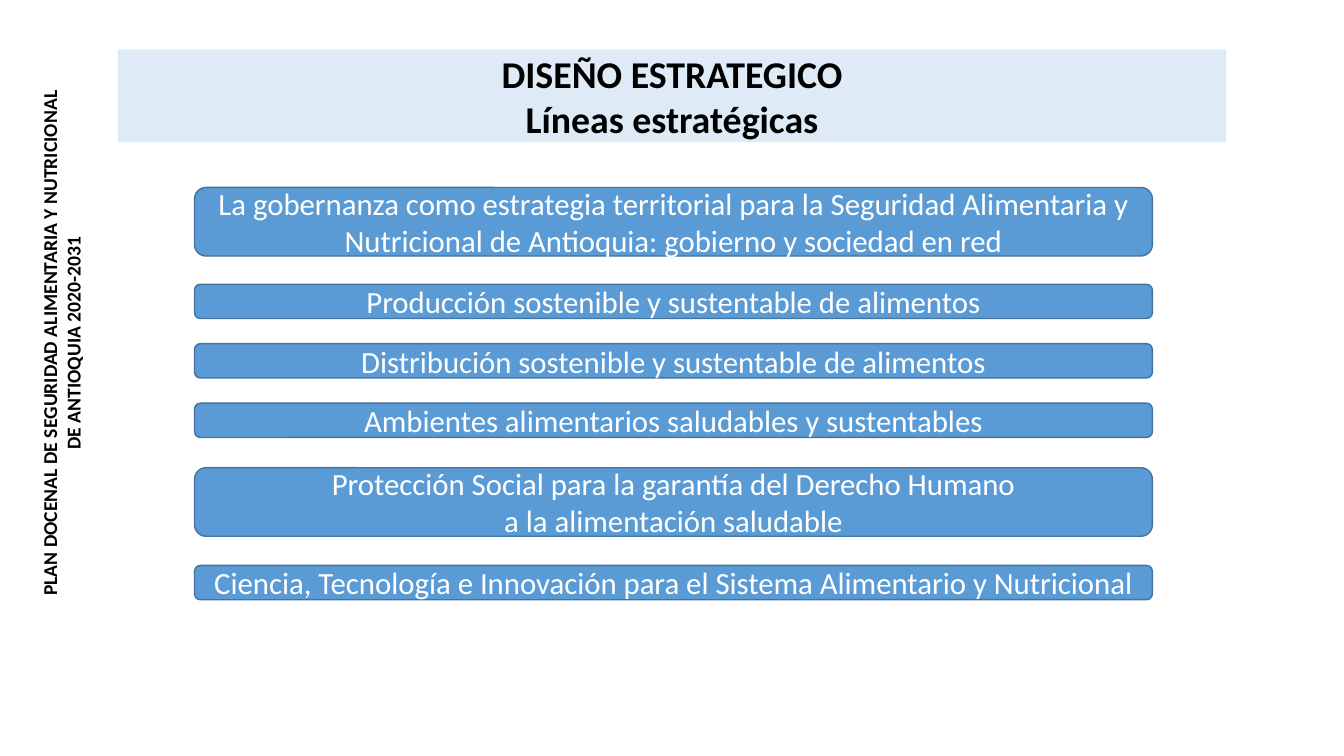
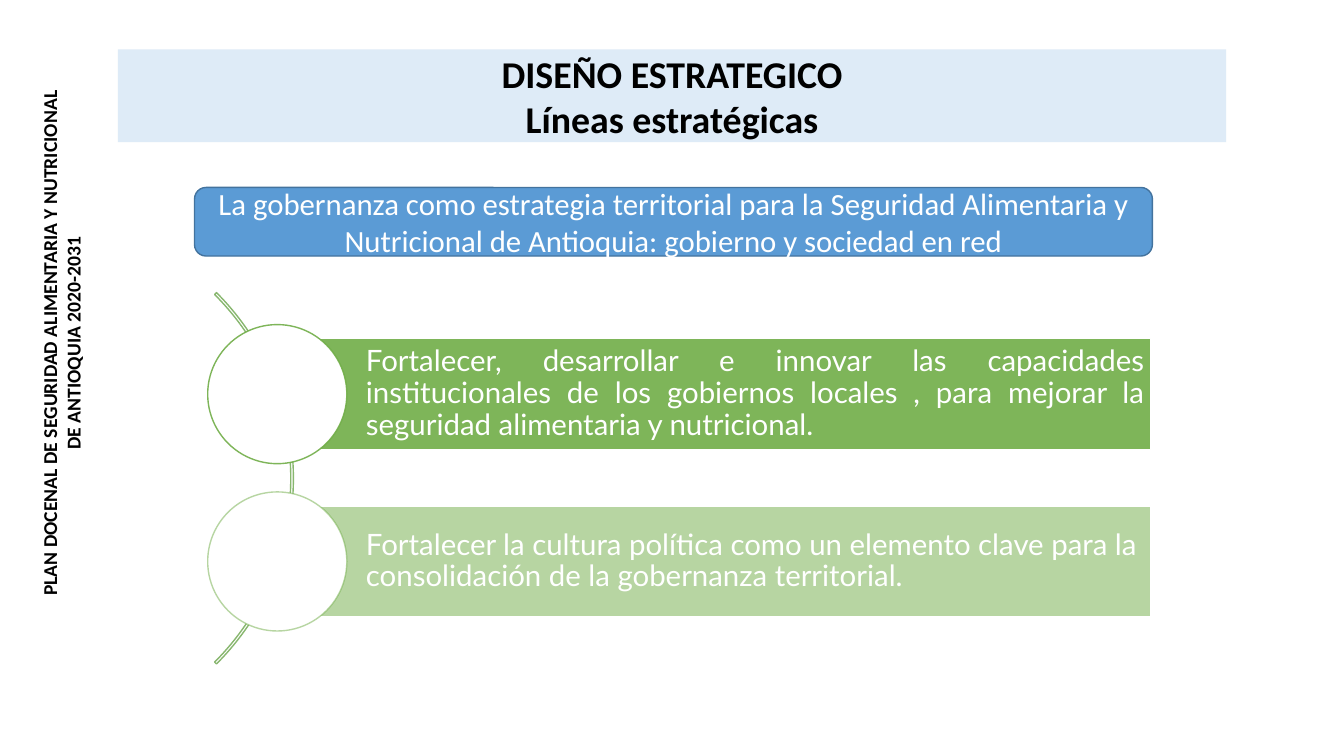
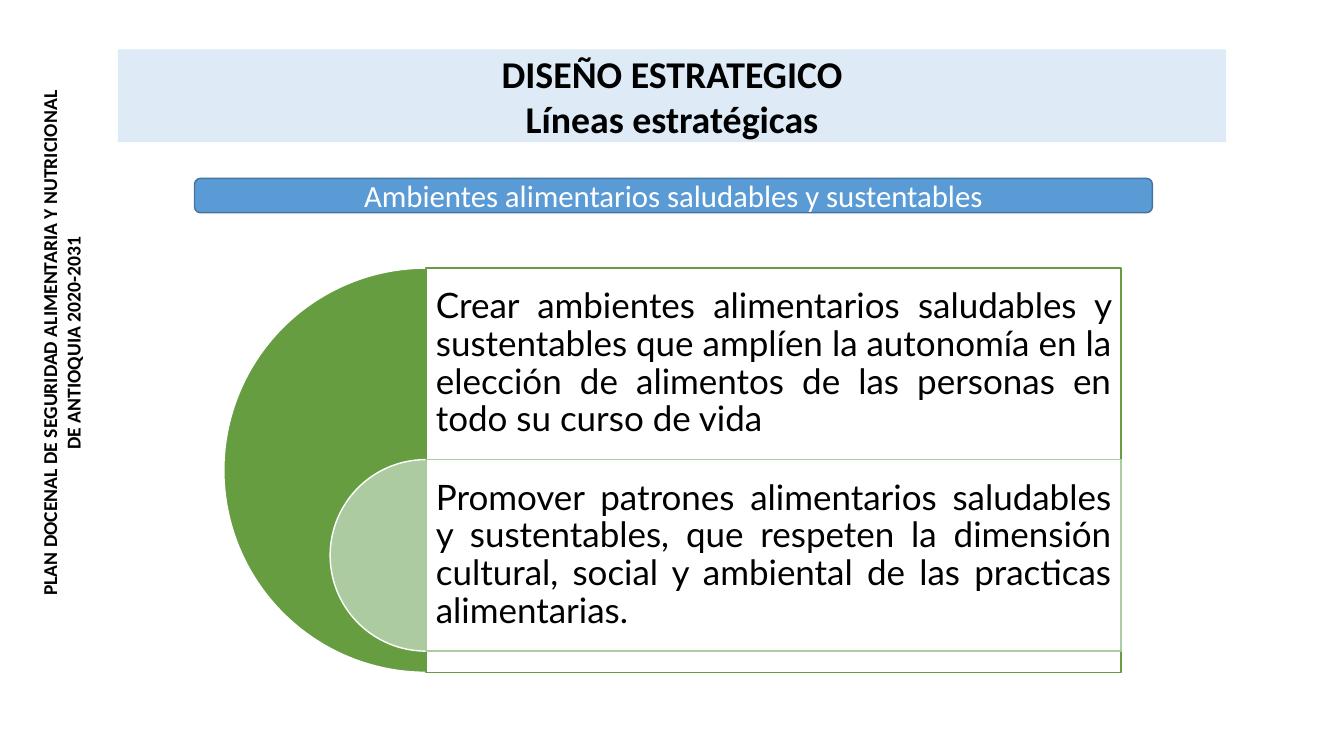
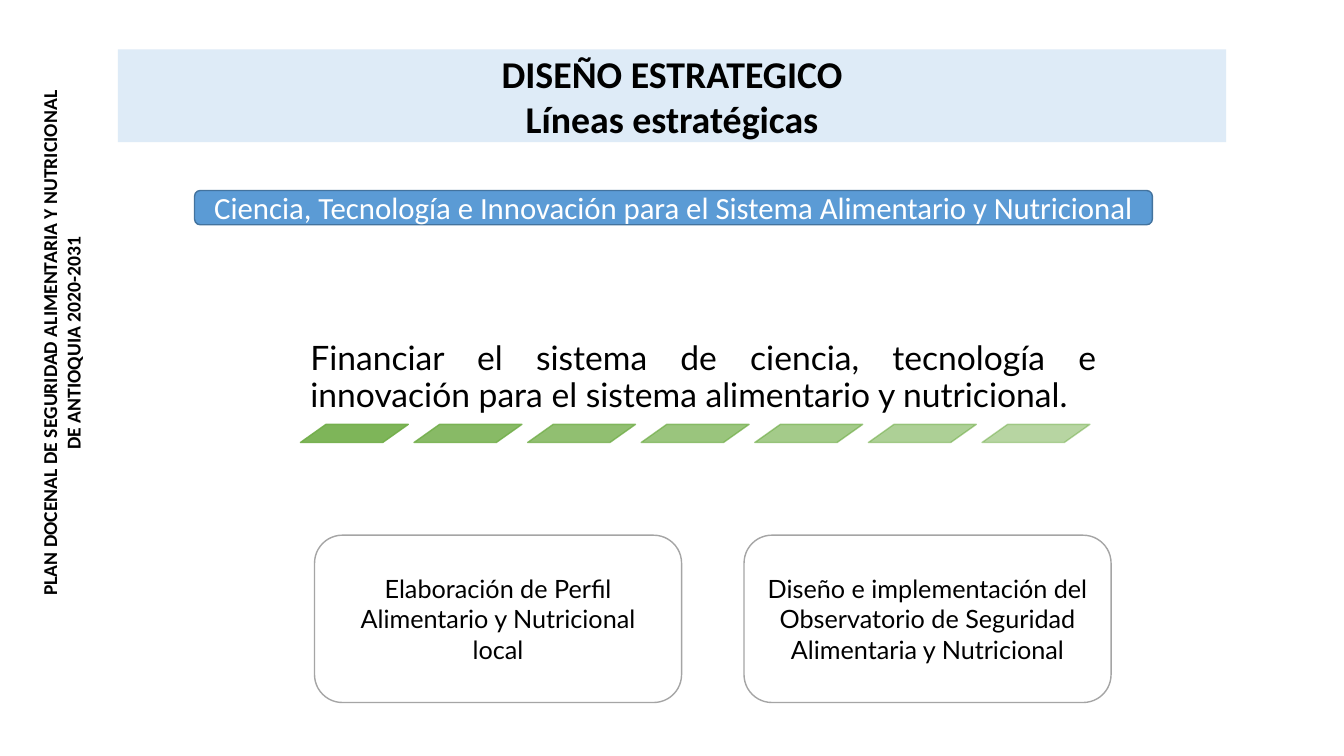
import collections

import pptx
import pptx.dml.color
import pptx.enum.shapes
import pptx.enum.text
import pptx.oxml.ns
import pptx.util
from lxml import etree

Inches = pptx.util.Inches
SHAPE = pptx.enum.shapes.MSO_SHAPE
ALIGN = pptx.enum.text.PP_ALIGN
ANCHOR = pptx.enum.text.MSO_ANCHOR
Box = collections.namedtuple("Box", "left top width height")

COLORS = {
    "black": "000000", "white": "FFFFFF", "band": "DEEBF7",
    "bar": "5B9BD5", "bar line": "43739E", "green": "70AD47",
    "arc": "88B76F", "dark green": "669D40", "pale green": "ADCBA0",
    "grey": "A5A5A5",
}
TITLE_BOX = Box(1.17, 0.49, 10.99, 0.92)
SIDE_BOX = Box(-4.7, 3.16, 10.61, 0.49)
BAR_LEFT, BAR_WIDTH, BAR_LINE_HEIGHT = 1.93, 9.5, 0.34

TITLE_FORMAT = {"name": "Calibri", "size": 27, "bold": True, "color": "black"}
SIDE_FORMAT = {"name": "Calibri", "size": 14, "bold": True, "color": "black"}
BAR_FORMAT = {"name": "Calibri", "size": 22, "color": "white"}
STRIPE_FORMAT = {"name": "Lato", "size": 21, "color": "white"}
PANEL_FORMAT = {"name": "Lato", "size": 25, "color": "black"}
GOAL_FORMAT = {"name": "Lato", "size": 24, "color": "black"}
CARD_FORMAT = {"name": "Lato", "size": 18, "color": "black"}

TITLE = ["DISEÑO ESTRATEGICO", "Líneas estratégicas"]
SIDE_LABEL = ["PLAN DOCENAL DE SEGURIDAD ALIMENTARIA Y NUTRICIONAL",
              "DE ANTIOQUIA 2020-2031"]
GOVERNANCE = ["La gobernanza como estrategia territorial para la Seguridad Alimentaria y",
              "Nutricional de Antioquia: gobierno y sociedad en red"]
ENVIRONMENTS = ["Ambientes alimentarios saludables y sustentables"]
SCIENCE = ["Ciencia, Tecnología e Innovación para el Sistema Alimentario y Nutricional"]
STRATEGIES = [
    (1.86, GOVERNANCE),
    (2.82, ["Producción sostenible y sustentable de alimentos"]),
    (3.41, ["Distribución sostenible y sustentable de alimentos"]),
    (4, ENVIRONMENTS),
    (4.64, ["Protección Social para la garantía del Derecho Humano",
            "a la alimentación saludable"]),
    (5.61, SCIENCE),
]


def rgb(color):
    return pptx.dml.color.RGBColor.from_string(COLORS[color])


def paint(color_format, color, opacity):
    """Set a solid fill's colour, with opacity in percent."""
    color_format.solid()
    color_format.fore_color.rgb = rgb(color)
    if opacity < 100:
        solid = color_format._xPr.find(pptx.oxml.ns.qn("a:solidFill"))
        etree.SubElement(solid[0], pptx.oxml.ns.qn("a:alpha"),
                         val=str(round(opacity * 1000)))


def place(shape, box):
    for side, length in box._asdict().items():
        setattr(shape, side, Inches(length))


def add_shape(page, kind, box, fill=None, line=None, opacity=100,
              line_opacity=100, adjust=()):
    shape = page.shapes.add_shape(kind, *map(Inches, box))
    shape.shadow.inherit = False
    if fill:
        paint(shape.fill, fill, opacity)
    else:
        shape.fill.background()
    if line:
        paint(shape.line.fill, line, line_opacity)
        shape.line.width = pptx.util.Pt(1)
    else:
        shape.line.fill.background()
    for index, value in enumerate(adjust):
        shape.adjustments[index] = value
    return shape


def write(shape, lines, font, align=ALIGN.CENTER, anchor=ANCHOR.MIDDLE,
          insets=(0.1, 0.05, 0.1, 0.05), spacing=1.0):
    """Fill a shape with one paragraph a line; insets run left, top, right, bottom."""
    frame = shape.text_frame
    frame.word_wrap = True
    frame.auto_size = pptx.enum.text.MSO_AUTO_SIZE.NONE
    frame.vertical_anchor = anchor
    for side, inset in zip(("left", "top", "right", "bottom"), insets):
        setattr(frame, "margin_" + side, Inches(inset))
    frame.text = "\n".join(lines)
    for para in frame.paragraphs:
        para.alignment, para.line_spacing = align, spacing
        para.space_before = pptx.util.Pt(0)
        for name, value in font.items():
            if name == "color":
                para.font.color.rgb = rgb(value)
            else:
                setattr(para.font, name,
                        pptx.util.Pt(value) if name == "size" else value)


def add_page(deck):
    """Add a slide with the title band and the vertical plan label."""
    page = deck.slides.add_slide(deck.slide_layouts[5])
    title = page.shapes.title
    place(title, TITLE_BOX)
    paint(title.fill, "band", 100)
    write(title, TITLE, TITLE_FORMAT, anchor=ANCHOR.TOP, insets=(0, 0.01, 0, 0))
    label = page.shapes.add_textbox(*map(Inches, SIDE_BOX))
    label.rotation = 270
    write(label, SIDE_LABEL, SIDE_FORMAT)
    return page


def add_bar(page, top, lines):
    box = Box(BAR_LEFT, top, BAR_WIDTH, BAR_LINE_HEIGHT * len(lines))
    bar = add_shape(page, SHAPE.ROUNDED_RECTANGLE, box, "bar", "bar line")
    write(bar, lines, BAR_FORMAT)


def add_arc_list(page, box, items):
    """Stripes with a circle at their left end, joined by an arc."""
    circle, stripe, pitch, arc = 1.38, 1.1, 1.66, 5.21
    add_shape(page, SHAPE.BLOCK_ARC,
              Box(box.left - 4.36, box.top - 1.08, arc, arc),
              line="arc", adjust=(189, 27, 0.005))
    for index, (text, opacity, align) in enumerate(items):
        top = box.top + index * pitch
        band = add_shape(
            page, SHAPE.RECTANGLE,
            Box(box.left + circle / 2, top + (circle - stripe) / 2,
                box.width - circle / 2, stripe),
            "green", "white", opacity)
        write(band, [text], STRIPE_FORMAT, align,
              insets=(0.88, 0.06, 0.06, 0.06), spacing=0.9)
        add_shape(page, SHAPE.OVAL, Box(box.left, top, circle, circle),
                  "white", "green", line_opacity=opacity)


def add_target_list(page, box, items):
    """Nested half discs, each with a panel running to the right."""
    row, middle = 1.9, box.left + box.height / 2
    for index, (text, color) in enumerate(items):
        top = box.top + index * row
        size = box.height if index == 0 else row
        add_shape(page, SHAPE.PIE, Box(middle - size / 2, top, size, size),
                  color, "white", adjust=(54, 162))
        panel = add_shape(page, SHAPE.RECTANGLE,
                          Box(middle, top, box.left + box.width - middle, size),
                          "white", color, opacity=90)
        write(panel, [text], PANEL_FORMAT, ALIGN.JUSTIFY,
              insets=(0.1, 0.1, 0.1, 0.1 + size - row), spacing=0.9)


def add_goal(page, box, text):
    """A sentence over a row of fading slanted marks."""
    count, mark_width, mark_height = 7, 1.07, 0.18
    sentence_height = box.height - mark_height
    sentence = page.shapes.add_textbox(
        *map(Inches, box._replace(height=sentence_height)))
    write(sentence, [text], GOAL_FORMAT, ALIGN.JUSTIFY, ANCHOR.BOTTOM,
          insets=(0.1, 0.1, 0.1, 0.1), spacing=0.9)
    pitch = (box.width - 0.16 - mark_width) / (count - 1)
    for index in range(count):
        opacity = 90 - 40 * index / (count - 1)
        add_shape(page, SHAPE.PARALLELOGRAM,
                  Box(box.left + index * pitch, box.top + sentence_height,
                      mark_width, mark_height),
                  "green", "green", opacity, opacity, adjust=(1.41,))


def add_cards(page, box, texts):
    width = 3.64
    pitch = (box.width - width) / (len(texts) - 1)
    for index, text in enumerate(texts):
        card = add_shape(page, SHAPE.ROUNDED_RECTANGLE,
                         box._replace(left=box.left + index * pitch, width=width),
                         "white", "grey")
        write(card, [text], CARD_FORMAT)


def build_strategies(deck):
    page = add_page(deck)
    for top, lines in STRATEGIES:
        add_bar(page, top, lines)


def build_governance(deck):
    page = add_page(deck)
    add_bar(page, 1.86, GOVERNANCE)
    add_arc_list(page, Box(2.06, 3.22, 9.35, 3.04), [
        ("Fortalecer, desarrollar e innovar las capacidades institucionales de "
         "los gobiernos locales , para mejorar la seguridad alimentaria y "
         "nutricional.", 90, ALIGN.JUSTIFY),
        ("Fortalecer la cultura política como un elemento clave para la "
         "consolidación de la gobernanza territorial.", 50, ALIGN.LEFT),
    ])


def build_environments(deck):
    page = add_page(deck)
    add_bar(page, 1.77, ENVIRONMENTS)
    add_target_list(page, Box(2.22, 2.66, 8.9, 4.01), [
        ("Crear ambientes alimentarios saludables y sustentables que amplíen la "
         "autonomía en la elección de alimentos de las personas en todo su "
         "curso de vida", "dark green"),
        ("Promover patrones alimentarios saludables y sustentables, que respeten "
         "la dimensión cultural, social y ambiental de las practicas "
         "alimentarias.", "pale green"),
    ])


def build_science(deck):
    page = add_page(deck)
    add_bar(page, 1.89, SCIENCE)
    add_goal(page, Box(2.98, 3.48, 7.99, 0.91),
             "Financiar el sistema de ciencia, tecnología e innovación para el "
             "sistema alimentario y nutricional.")
    add_cards(page, Box(3.12, 5.31, 7.9, 1.66), [
        "Elaboración de Perfil Alimentario y Nutricional local",
        "Diseño e implementación del Observatorio de Seguridad Alimentaria y "
        "Nutricional",
    ])


def main():
    deck = pptx.Presentation()
    deck.slide_width, deck.slide_height = Inches(13.33), Inches(7.5)
    for build in (build_strategies, build_governance, build_environments,
                  build_science):
        build(deck)
    deck.save("out.pptx")


if __name__ == "__main__":
    main()
